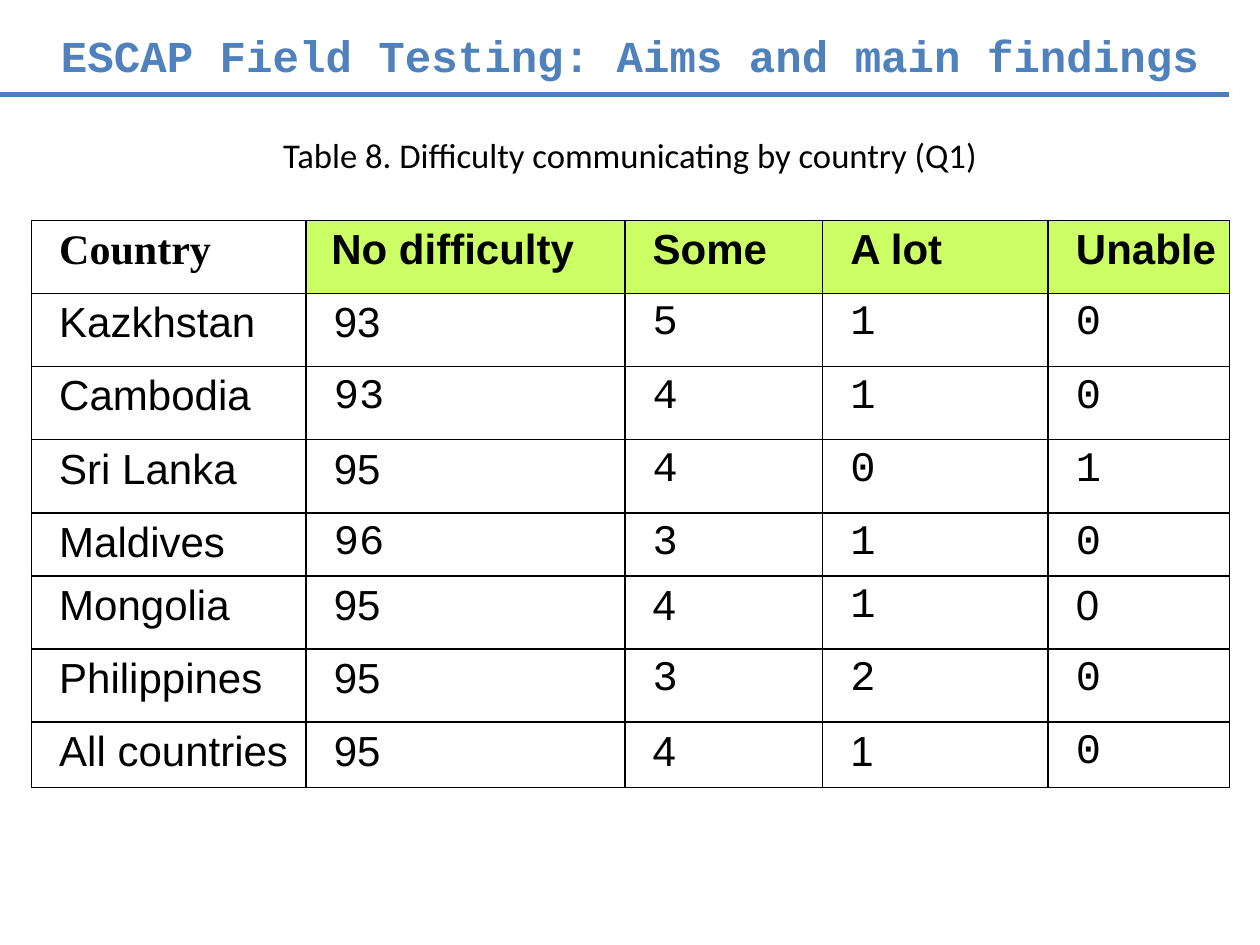
from lxml import etree
from pptx import Presentation, util as u
from pptx.dml.color import RGBColor
from pptx.enum import shapes, text
from pptx.oxml import parse_xml
from pptx.oxml.ns import qn, nsdecls

BLUE = RGBColor(0x4F, 0x81, 0xBD)
RULE = RGBColor(0x4B, 0x7E, 0xBC)
LIME = RGBColor(0xCC, 0xFF, 0x66)
BLACK = RGBColor(0, 0, 0)
SANS, MONO, SERIF = "Arial", "Courier New", "Times New Roman"

deck = Presentation()
deck.slide_width, deck.slide_height = u.Inches(10), u.Inches(7.5)
wide, high = deck.slide_width, deck.slide_height
page = deck.slides.add_slide(deck.slide_layouts[6])


def write(par, words, color, **form):
    run = par.add_run()
    run.text = words
    run.font.color.rgb = color
    for key, val in form.items():
        setattr(run.font, key, val)


# Rule under the title
rule = page.shapes.add_connector(
    shapes.MSO_CONNECTOR.STRAIGHT, 0, int(high * 0.1), int(wide * 0.975), int(high * 0.1))
rule.line.color.rgb = RULE
rule.line.width = u.Pt(3)
etree.SubElement(rule._element.spPr, qn("a:effectLst"))

# Title and table caption, each centred on its share of the height
heads = [
    (0.058, "ESCAP Field Testing: Aims and main findings", BLUE,
     {"name": MONO, "size": u.Pt(25.2), "bold": True}),
    (0.164, "Table 8. Difficulty communicating by country (Q1)", BLACK,
     {"name": "Calibri", "size": u.Pt(19.8), "bold": False}),
]
for mid, words, color, form in heads:
    box = page.shapes.add_textbox(
        int(wide * 0.025), int(high * (mid - 0.035)), int(wide * 0.95), int(high * 0.07))
    frame = box.text_frame
    frame.word_wrap = True
    frame.vertical_anchor = text.MSO_ANCHOR.MIDDLE
    frame.paragraphs[0].alignment = text.PP_ALIGN.CENTER
    write(frame.paragraphs[0], words, color, **form)

# Table: the last entry of a row tells each cell's face, S sans and M mono
rows = [
    ("Country", "No difficulty", "Some", "A lot", "Unable", "TSSSS"),
    ("Kazkhstan", "93", "5", "1", "0", "SSMMM"),
    ("Cambodia", "93", "4", "1", "0", "SMMMM"),
    ("Sri Lanka", "95", "4", "0", "1", "SSMMM"),
    ("Maldives", "96", "3", "1", "0", "SMMMM"),
    ("Mongolia", "95", "4", "1", "0", "SSSMS"),
    ("Philippines", "95", "3", "2", "0", "SSMMM"),
    ("All countries", "95", "4", "1", "0", "SSSSM"),
]
faces = {"S": SANS, "M": MONO, "T": SERIF}
cols = [2.18, 2.53, 1.57, 1.79, 1.44]
tall = [0.58, 0.58, 0.58, 0.58, 0.5, 0.58, 0.58, 0.52]
grid = page.shapes.add_table(
    len(rows), len(cols), int(wide * 0.025), u.Inches(1.75),
    u.Inches(sum(cols)), u.Inches(sum(tall))).table
grid.first_row = grid.horz_banding = False
for col, size in zip(grid.columns, cols):
    col.width = u.Inches(size)
for row, size in zip(grid.rows, tall):
    row.height = u.Inches(size)

for r, (*words, kinds) in enumerate(rows):
    for c, (word, kind) in enumerate(zip(words, kinds)):
        cell = grid.cell(r, c)
        par = cell.text_frame.paragraphs[0]
        write(par, word, BLACK, name=faces[kind], size=u.Pt(24), bold=r == 0)

        # Indents: hanging for sans, plain for mono and the widest heading
        left, hang = (0.12, 0) if kind == "M" else (0.4, -0.28)
        if (r, c) == (0, 1):
            left, hang = 0.1, 0
        prop = par._p.get_or_add_pPr()
        prop.set("marL", str(u.Inches(left)))
        prop.set("indent", str(u.Inches(hang)))
        if kind == "M":
            par.space_before = u.Pt(4)

        # Borders come before the fill
        for side in "LRTB":
            cell._tc.get_or_add_tcPr().append(parse_xml(
                f'<a:ln{side} {nsdecls("a")} w="{u.Pt(1)}"><a:solidFill>'
                f'<a:srgbClr val="{BLACK}"/></a:solidFill></a:ln{side}>'))
        if r == 0 and c > 0:
            cell.fill.solid()
            cell.fill.fore_color.rgb = LIME
        else:
            cell.fill.background()

deck.save("out.pptx")
